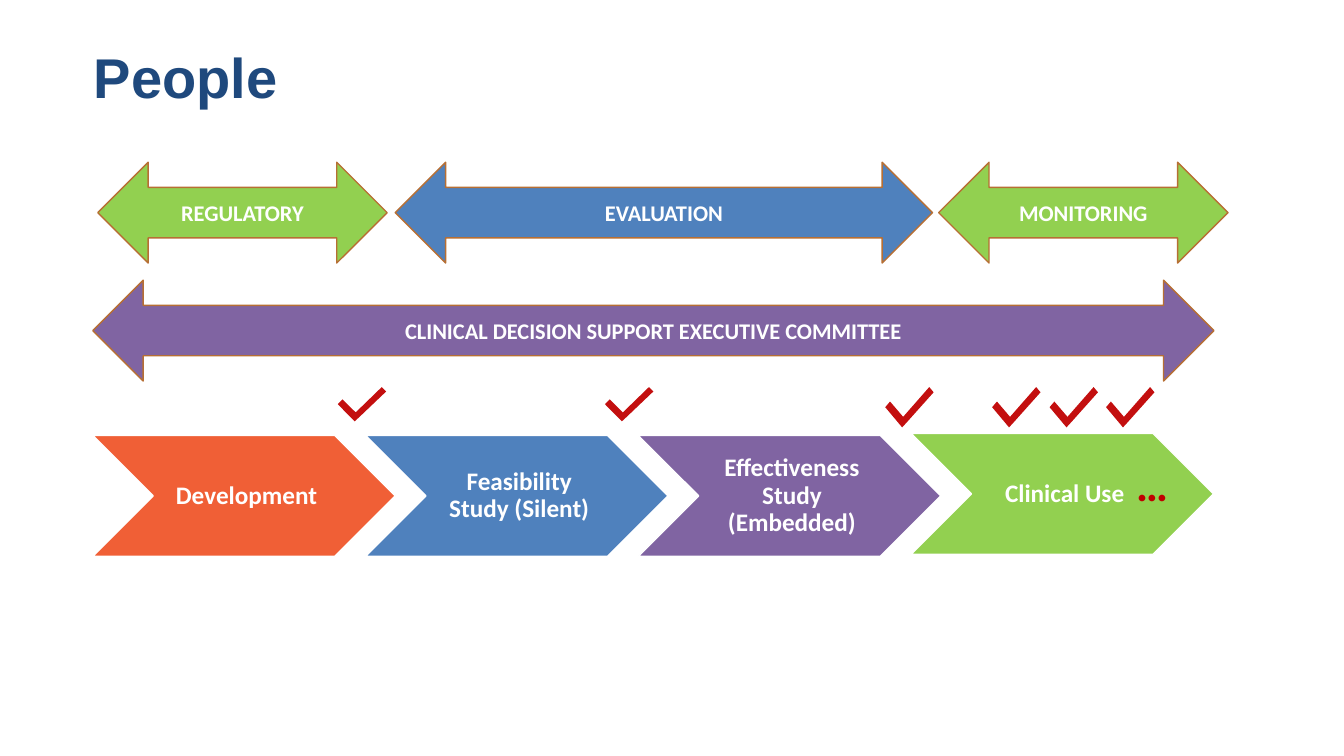
import pptx
import pptx.util
import pptx.dml.color
import pptx.enum.shapes
import pptx.enum.text
from dataclasses import dataclass
from lxml import etree

Inches, Pt = pptx.util.Inches, pptx.util.Pt
MSO_SHAPE = pptx.enum.shapes.MSO_SHAPE
ALIGN = pptx.enum.text.PP_ALIGN
MIDDLE = pptx.enum.text.MSO_ANCHOR.MIDDLE


@dataclass(frozen=True)
class Theme:
    navy: str = "1F497D"
    white: str = "FFFFFF"
    orange: str = "F05F36"
    blue: str = "4F81BD"
    purple: str = "8064A2"
    green: str = "92D050"
    red: str = "C00000"
    outline: str = "B76F34"
    heading_font: str = "Arial"
    body_font: str = "Calibri"
    title_size: int = 40
    arrow_size: int = 16
    stage_size: int = 18
    dots_size: int = 32


T = Theme()

# Content
TITLE = "People"
ARROW_H, ROW_1, ROW_2 = 1, 1.61, 2.78
ARROWS = [  # text, colour, left, top, width
    ("CLINICAL DECISION SUPPORT EXECUTIVE COMMITTEE", T.purple, 0.92, ROW_2, 11.12),
    ("REGULATORY", T.green, 0.97, ROW_1, 2.87),
    ("EVALUATION", T.blue, 3.92, ROW_1, 5.33),
    ("MONITORING", T.green, 9.31, ROW_1, 2.87),
]
STAGE_LEFT, STAGE_PITCH, STAGE_W, STAGE_H = 0.92, 2.705, 3, 1.2
STAGES = [  # text, colour, top
    ("Development", T.orange, 4.32),
    ("Feasibility Study (Silent)", T.blue, 4.32),
    ("Effectiveness Study (Embedded)", T.purple, 4.32),
    ("Clinical Use", T.green, 4.3),
]
TICK_TOP, TICK_W = 3.84, 0.48
TICKS = [(3.35, 0.34), (6, 0.34), (8.78, 0.4),  # left, height
         (9.84, 0.4), (10.41, 0.4), (10.97, 0.4)]
TICK_OUTLINE = [(0.91, 0), (0.37, 0.74), (0.1, 0.36), (0, 0.5),  # shares of tick
                (0.35, 1), (0.45, 0.87), (1, 0.13)]
TICK_OPACITY = 94


def rgb(code):
    return pptx.dml.color.RGBColor.from_string(code)


def box(*lengths):
    return [Inches(v) for v in lengths]


def write(sp, text, size, color, font=T.body_font, align=ALIGN.CENTER):
    tf = sp.text_frame
    tf.text = text
    p = tf.paragraphs[0]
    p.alignment = align
    f = p.runs[0].font
    f.name, f.size, f.bold = font, Pt(size), True
    f.color.rgb = rgb(color)
    return tf


def paint(sp, fill, line=None):
    sp.shadow.inherit = False
    sp.fill.solid()
    sp.fill.fore_color.rgb = rgb(fill)
    if line:
        sp.line.color.rgb = rgb(line)
        sp.line.width = Pt(1)
    else:
        sp.line.fill.background()


def add_block(s, kind, place, text, size, fill, line):
    sp = s.shapes.add_shape(kind, *box(*place))
    paint(sp, fill, line)
    tf = write(sp, text, size, T.white)
    tf.word_wrap = True
    tf.vertical_anchor = MIDDLE
    return tf


def add_tick(s, left, height):
    points = [box(left + x * TICK_W, TICK_TOP + y * height) for x, y in TICK_OUTLINE]
    builder = s.shapes.build_freeform(*points[0])
    builder.add_line_segments(points[1:], close=True)
    sp = builder.convert_to_shape()
    paint(sp, T.red)
    color = sp.fill._xPr.find(".//" + pptx.oxml.ns.qn("a:srgbClr"))
    etree.SubElement(color, pptx.oxml.ns.qn("a:alpha"), val=str(TICK_OPACITY * 1000))


def main():
    prs = pptx.Presentation()
    prs.slide_width, prs.slide_height = box(13.33, 7.5)
    s = prs.slides.add_slide(prs.slide_layouts[5])

    # Title
    title = s.shapes.title
    title.left, title.top, title.width, title.height = box(0.83, 0.44, 11.5, 0.71)
    tf = write(title, TITLE, T.title_size, T.navy, T.heading_font, ALIGN.LEFT)
    tf.vertical_anchor = MIDDLE
    tf.paragraphs[0].line_spacing = 0.9

    # Stages of the process
    for i, (text, color, top) in enumerate(STAGES):
        place = (STAGE_LEFT + i * STAGE_PITCH, top, STAGE_W, STAGE_H)
        tf = add_block(s, MSO_SHAPE.CHEVRON, place, text, T.stage_size, color, T.white)
        tf.margin_left = Inches(0.08)
        tf.margin_top = tf.margin_right = tf.margin_bottom = Inches(0.03)
        tf.paragraphs[0].line_spacing = 0.9

    # Groups of people
    for text, color, left, top, width in ARROWS:
        add_block(s, MSO_SHAPE.LEFT_RIGHT_ARROW, (left, top, width, ARROW_H),
                  text, T.arrow_size, color, T.outline)

    # Check marks and continuation dots
    for left, height in TICKS:
        add_tick(s, left, height)
    dots = s.shapes.add_textbox(*box(11.17, 4.48, 0.5, 0.64))
    write(dots, "…", T.dots_size, T.red, align=ALIGN.LEFT)

    prs.save("out.pptx")


if __name__ == "__main__":
    main()
